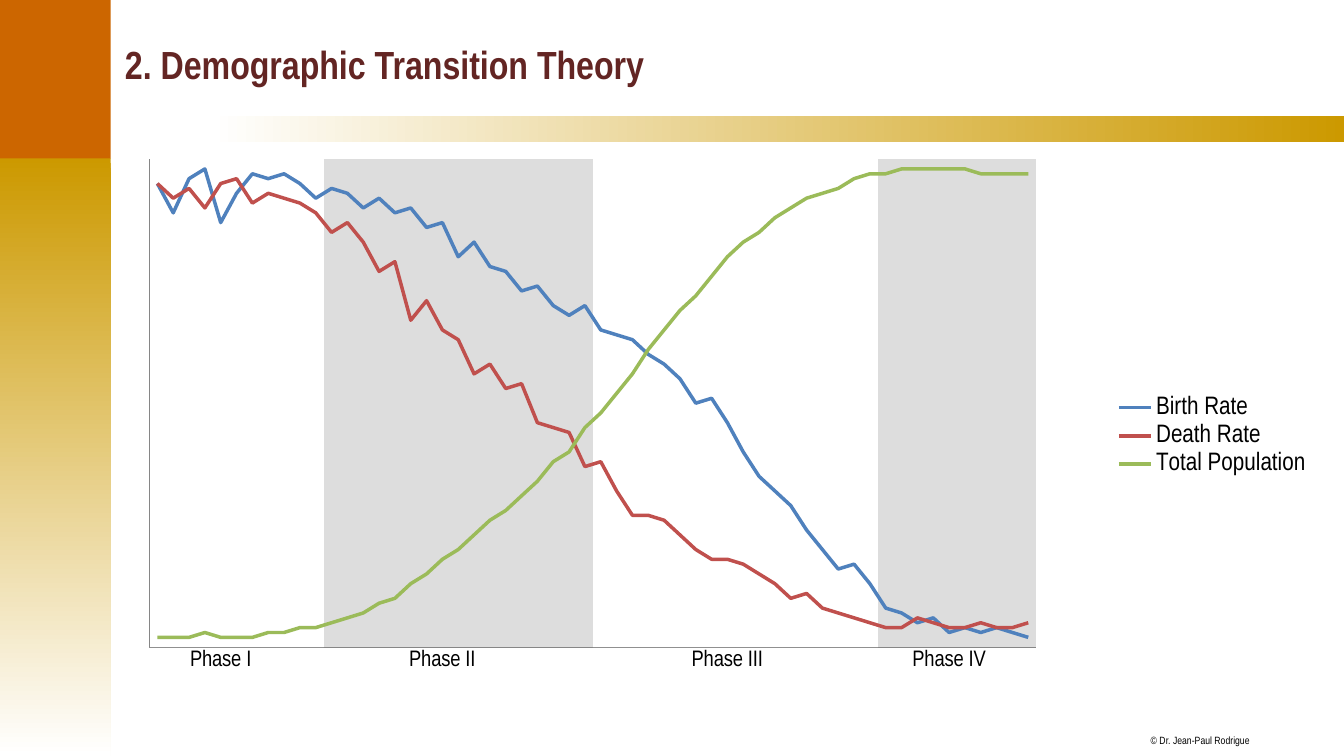
from lxml import etree
from pptx import Presentation
from pptx.chart.data import CategoryChartData
from pptx.dml.color import RGBColor
from pptx.enum.chart import XL_CHART_TYPE as CT, XL_LEGEND_POSITION as LP
from pptx.enum.chart import XL_MARKER_STYLE as MS, XL_TICK_LABEL_POSITION as TL
from pptx.enum.chart import XL_TICK_MARK as TM
from pptx.enum.shapes import MSO_SHAPE
from pptx.enum.text import MSO_ANCHOR
from pptx.oxml import parse_xml
from pptx.oxml.ns import nsdecls, qn
from pptx.util import Cm, Pt

# Content
FONT = "Arial Narrow"
TITLE = "2. Demographic Transition Theory"
CREDIT = "© Dr. Jean-Paul Rodrigue"
YEARS = 56
PHASES = {4: "Phase I", 18: "Phase II", 36: "Phase III", 50: "Phase IV"}
SHADED = [(11, 28), (46, 56)]
BAND_COLOR = "DDDDDD"
LINES = [
    ("Birth Rate", "4F81BD",
     [95, 89, 96, 98, 87, 93, 97, 96, 97, 95, 92, 94, 93, 90, 92, 89, 90, 86, 87,
      80, 83, 78, 77, 73, 74, 70, 68, 70, 65, 64, 63, 60, 58, 55, 50, 51, 46, 40,
      35, 32, 29, 24, 20, 16, 17, 13, 8, 7, 5, 6, 3, 4, 3, 4, 3, 2]),
    ("Death Rate", "C0504D",
     [95, 92, 94, 90, 95, 96, 91, 93, 92, 91, 89, 85, 87, 83, 77, 79, 67, 71, 65,
      63, 56, 58, 53, 54, 46, 45, 44, 37, 38, 32, 27, 27, 26, 23, 20, 18, 18, 17,
      15, 13, 10, 11, 8, 7, 6, 5, 4, 4, 6, 5, 4, 4, 5, 4, 4, 5]),
    ("Total Population", "9BBB59",
     [2, 2, 2, 3, 2, 2, 2, 3, 3, 4, 4, 5, 6, 7, 9, 10, 13, 15, 18, 20, 23, 26,
      28, 31, 34, 38, 40, 45, 48, 52, 56, 61, 65, 69, 72, 76, 80, 83, 85, 88, 90,
      92, 93, 94, 96, 97, 97, 98, 98, 98, 98, 98, 97, 97, 97, 97]),
]
PLOT_BOX = {"x": 0.032, "y": 0.026, "w": 0.732, "h": 0.836}

prs = Presentation()
prs.slide_width, prs.slide_height = Cm(33.87), Cm(19.05)
s = prs.slides.add_slide(prs.slide_layouts[6])


def rgb(color):
    return RGBColor.from_string(color)


def add_rect(box, *colors, angle=0):
    sp = s.shapes.add_shape(MSO_SHAPE.RECTANGLE, *map(Cm, box))
    sp.shadow.inherit = False
    sp.line.fill.background()
    if len(colors) == 1:
        sp.fill.solid()
        sp.fill.fore_color.rgb = rgb(colors[0])
        return
    sp.fill.gradient()
    sp.fill.gradient_angle = angle
    for stop, pos, color in zip(sp.fill.gradient_stops, (0, 1), colors):
        stop.position = pos
        stop.color.rgb = rgb(color)


def add_text(box, text, size, color, bold=False, margin=None, wrap=True):
    tf = s.shapes.add_textbox(*map(Cm, box)).text_frame
    tf.word_wrap = wrap
    tf.vertical_anchor = MSO_ANCHOR.MIDDLE
    if margin is not None:
        tf.margin_left = tf.margin_right = tf.margin_top = tf.margin_bottom = margin
    r = tf.paragraphs[0].add_run()
    r.text = text
    r.font.name, r.font.size, r.font.bold = FONT, Pt(size), bold
    r.font.color.rgb = rgb(color)


# Frame and texts
add_rect((0, 3.99, 2.79, 15.06), "CC9900", "FFFFFF", angle=270)
add_rect((5.31, 2.92, 28.56, 0.67), "FFFFFF", "CC9900")
add_text((29, 18.49, 2.51, 0.33), CREDIT, 7.5, "000000", margin=0, wrap=False)
add_rect((0, 0, 2.79, 3.99), "CC6600")
add_text((2.9, 0.28, 30.4, 2.64), TITLE, 28, "632523", bold=True)

# Chart with shaded phases
data = CategoryChartData()
data.categories = [PHASES.get(i, "") for i in range(YEARS)]
data.add_series("Series 1", [100 if any(a <= i < b for a, b in SHADED) else 0
                             for i in range(YEARS)])
for name, _, values in LINES:
    data.add_series(name, values)
chart = s.shapes.add_chart(CT.COLUMN_STACKED_100, Cm(2.79), Cm(3.63), Cm(30.53),
                           Cm(14.71), data).chart
chart.has_title = False
chart.font.name, chart.font.size = FONT, Pt(18)
chart.font.color.rgb = rgb("000000")
chart.has_legend = True
chart.legend.position = LP.RIGHT
chart.legend.include_in_layout = False
chart.legend._element.find(qn("c:legendPos")).addnext(parse_xml(
    f'<c:legendEntry {nsdecls("c")}><c:idx val="0"/><c:delete val="1"/></c:legendEntry>'))

cat_ax, val_ax = chart.category_axis, chart.value_axis
for ax in (cat_ax, val_ax):
    ax.major_tick_mark = ax.minor_tick_mark = TM.NONE
    ax.has_major_gridlines = False
    ax.format.line.color.rgb = rgb("868686")
val_ax.tick_label_position = TL.NONE
val_ax.minimum_scale, val_ax.maximum_scale = 0, 1
cat_ax.tick_labels.font.size = Pt(16)
cat_ax._element.find(qn("c:txPr")).find(qn("a:bodyPr")).set("rot", "-60000000")
cat_ax._element.find(qn("c:noMultiLvlLbl")).addprevious(
    parse_xml(f'<c:tickLblSkip {nsdecls("c")} val="1"/>'))

# Move the three curves to a line plot on a second axis
bars = chart.plots[0]
bars.gap_width, bars.overlap, bars.vary_by_categories = 0, 100, False
line_plot = parse_xml(
    f'<c:lineChart {nsdecls("c")}><c:grouping val="standard"/><c:varyColors val="0"/>'
    '<c:marker val="1"/><c:axId val="501"/><c:axId val="502"/></c:lineChart>')
line_end = line_plot.find(qn("c:marker"))
for ser in bars._element.findall(qn("c:ser"))[1:]:
    for bar_only in ser.findall(qn("c:invertIfNegative")):
        ser.remove(bar_only)
    line_end.addprevious(ser)
bars._element.addnext(line_plot)


def second_axis(tag, own, other, pos, delete, crosses, top=""):
    return parse_xml(
        f'<c:{tag} {nsdecls("c", "a")}><c:axId val="{own}"/><c:scaling>'
        f'<c:orientation val="minMax"/>{top}</c:scaling><c:delete val="{delete}"/>'
        f'<c:axPos val="{pos}"/><c:majorTickMark val="none"/>'
        '<c:minorTickMark val="none"/><c:tickLblPos val="none"/>'
        '<c:spPr><a:ln><a:noFill/></a:ln></c:spPr>'
        f'<c:crossAx val="{other}"/><c:crosses val="{crosses}"/></c:{tag}>')


val_ax._element.addnext(second_axis("catAx", 501, 502, "b", 1, "autoZero"))
val_ax._element.addnext(second_axis("valAx", 502, 501, "r", 0, "max",
                                    '<c:max val="100"/><c:min val="0"/>'))

# Series colours
bars.series[0].format.fill.solid()
bars.series[0].format.fill.fore_color.rgb = rgb(BAND_COLOR)
for ser, (_, color, _) in zip(chart.plots[1].series, LINES):
    ser.format.line.color.rgb = rgb(color)
    ser.format.line.width = Pt(2.5)
    ser.marker.style = MS.NONE
    ser.smooth = False

# Fixed plot area
plot_area = bars._element.getparent()
for old in plot_area.findall(qn("c:layout")):
    plot_area.remove(old)
layout = etree.Element(qn("c:layout"))
manual = etree.SubElement(layout, qn("c:manualLayout"))
settings = {"layoutTarget": "inner", "xMode": "edge", "yMode": "edge", **PLOT_BOX}
for key, value in settings.items():
    etree.SubElement(manual, qn("c:" + key)).set("val", str(value))
plot_area.insert(0, layout)

prs.save("out.pptx")
